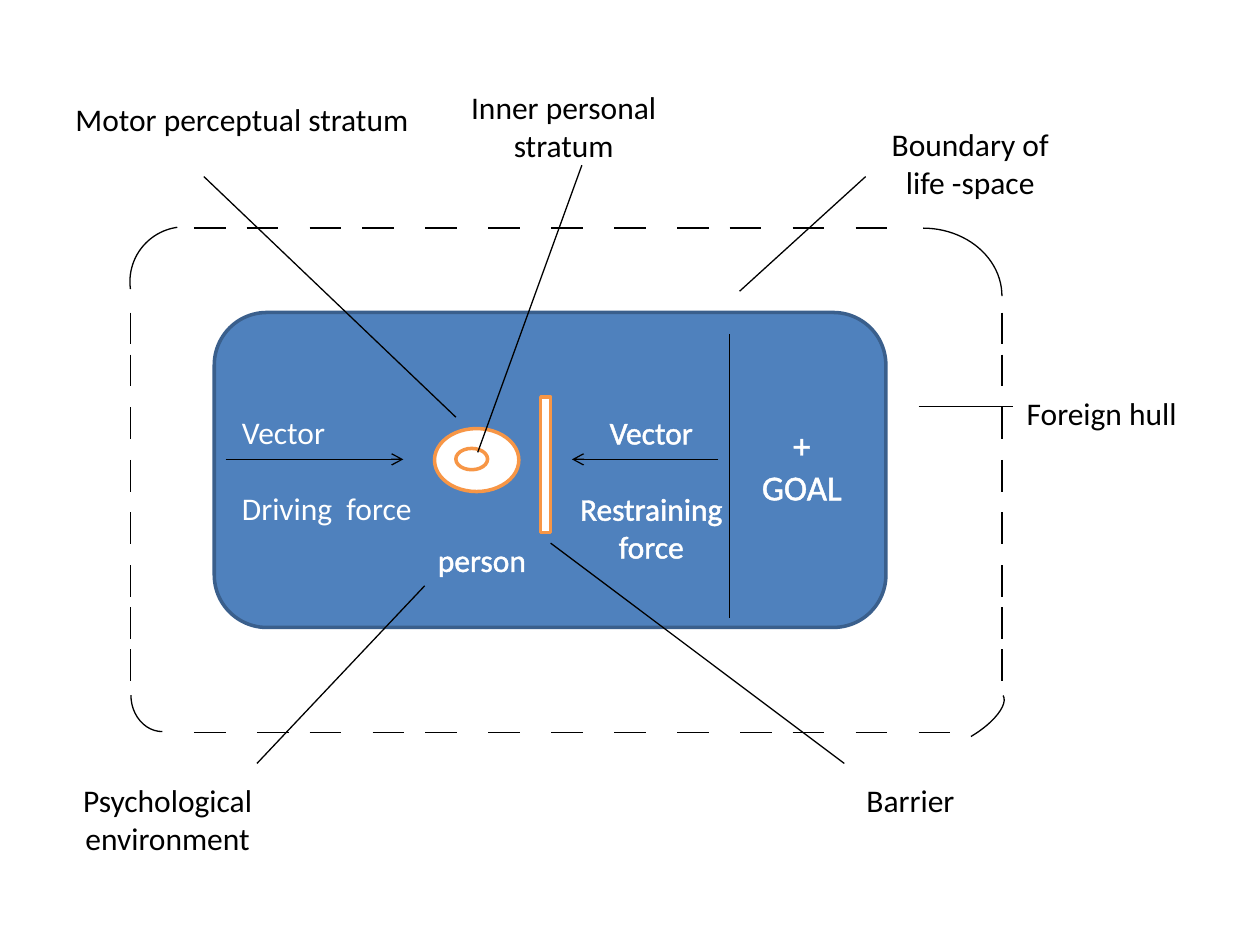
from itertools import accumulate
from lxml.etree import SubElement
from pptx import Presentation
from pptx.dml.color import RGBColor
from pptx.enum.shapes import MSO_CONNECTOR as Link, MSO_SHAPE as Kind
from pptx.enum.text import MSO_ANCHOR as Anchor, MSO_AUTO_SIZE as Fit, PP_ALIGN as Align
from pptx.oxml import parse_xml
from pptx.oxml.ns import qn
from pptx.util import Cm, Pt

BLACK, WHITE, BLUE, NAVY, ORANGE = "000000", "FFFFFF", "4F81BD", "3A5F8C", "F79646"
STEPS = {"T": 0.85, "S": 1.06, "L": 1.27}
DASH = 0.64
NS = "http://schemas.openxmlformats.org/drawingml/2006/main"


def tint(code):
    """Return the colour for a hex string."""
    return RGBColor.from_string(code)


def stroke(item, code, width):
    """Set the line colour and width of a shape or connector."""
    item.line.color.rgb = tint(code)
    item.line.width = Pt(width)


def write(frame, text, code, size=18, align=Align.CENTER):
    """Fill a text frame and format its runs."""
    frame.text = text
    for para in frame.paragraphs:
        para.alignment = align
        for run in para.runs:
            run.font.name = "Calibri"
            run.font.size = Pt(size)
            run.font.color.rgb = tint(code)


def outline(frame, code):
    """Draw a thin outline around the letters of a text frame."""
    for para in frame.paragraphs:
        for run in para.runs:
            edge = parse_xml(
                f'<a:ln xmlns:a="{NS}" w="{Pt(1.45)}"><a:solidFill>'
                f'<a:srgbClr val="{code}"/></a:solidFill></a:ln>')
            run.font._element.insert(0, edge)


def label(slide, box, text, code=BLACK, size=18, wrap=False):
    """Add a centred text box and return its frame."""
    frame = slide.shapes.add_textbox(*map(Cm, box)).text_frame
    frame.word_wrap = wrap
    frame.auto_size = Fit.SHAPE_TO_FIT_TEXT
    write(frame, text, code, size)
    return frame


def block(slide, kind, box, fill, edge):
    """Add a filled shape with a two-point edge."""
    shape = slide.shapes.add_shape(kind, *map(Cm, box))
    shape.shadow.inherit = False
    shape.fill.solid()
    shape.fill.fore_color.rgb = tint(fill)
    stroke(shape, edge, 2)
    return shape


def arc(slide, box, turn=0, flip=False):
    """Add one rounded corner of the hull."""
    shape = slide.shapes.add_shape(Kind.ARC, *map(Cm, box))
    shape.shadow.inherit = False
    shape.fill.background()
    stroke(shape, BLACK, 0.75)
    shape.rotation = turn
    if flip:
        frame = shape._element.spPr.find(qn("a:xfrm"))
        frame.set("flipH", "1")
        frame.set("flipV", "1")


def line(slide, ends, arrow=False):
    """Add a thin straight line, with an arrowhead at its end if asked."""
    link = slide.shapes.add_connector(Link.STRAIGHT, *map(Cm, ends))
    stroke(link, BLACK, 0.75)
    if arrow:
        SubElement(link.line._get_or_add_ln(), qn("a:tailEnd"), type="arrow")
    SubElement(link._element.spPr, qn("a:effectLst"))


def starts(first, steps):
    """Return the start of each dash along one side."""
    return accumulate((STEPS[step] for step in steps), initial=first)


def hull(slide):
    """Draw the dashed sides of the foreign hull."""
    for x in (20.2, 2.63):
        for y in starts(6.3, "TSSSSTT"):
            line(slide, (x, y, x, y + DASH))
    for y, steps in ((4.6, "SLSLLLLLSLL"), (14.76, "LSLSLLLLLSLL")):
        for x in starts(3.91, steps):
            line(slide, (x, y, x + DASH, y))


def space(slide):
    """Draw the life space with the person, barrier, forces and goal."""
    field = block(slide, Kind.ROUNDED_RECTANGLE, (4.32, 6.3, 13.54, 6.35), BLUE, NAVY)
    frame = field.text_frame
    frame.vertical_anchor = Anchor.MIDDLE
    write(frame, "Vector\nDriving  force", WHITE, align=Align.LEFT)
    frame.paragraphs[0].space_after = Pt(22)
    line(slide, (4.55, 9.26, 8.13, 9.26), arrow=True)
    outline(label(slide, (12.37, 8.41, 7.59, 1.96), "+\nGOAL", WHITE, 20, True), WHITE)
    line(slide, (14.7, 6.73, 14.7, 12.45))
    block(slide, Kind.RECTANGLE, (10.9, 8, 0.2, 2.74), WHITE, ORANGE)
    block(slide, Kind.OVAL, (8.76, 8.64, 1.7, 1.27), WHITE, ORANGE)
    force = label(slide, (11.35, 8.2, 3.56, 3.33), "Vector\nRestraining\nforce", WHITE)
    force.paragraphs[0].space_after = Pt(22)
    outline(force, WHITE)
    line(slide, (14.48, 9.26, 11.53, 9.26), arrow=True)
    outline(label(slide, (8.56, 10.77, 2.31, 1.02), "person", WHITE), WHITE)
    block(slide, Kind.OVAL, (9.19, 9.04, 0.64, 0.43), WHITE, ORANGE)


def main():
    """Build the slide and save it."""
    deck = Presentation()
    deck.slide_width, deck.slide_height = Cm(25.4), Cm(19.05)
    slide = deck.slides.add_slide(deck.slide_layouts[6])

    motor = slide.shapes.add_textbox(*map(Cm, (1.27, 1.9, 23.29, 15.67))).text_frame
    motor.word_wrap = True
    write(motor, "Motor perceptual stratum", BLACK, align=Align.LEFT)

    arc(slide, (17.02, 4.6, 3.18, 2.74))
    arc(slide, (2.64, 13.28, 1.27, 1.47), flip=True)
    arc(slide, (19, 13.54, 0.76, 1.96), 239.3, True)
    arc(slide, (2.62, 4.57, 2.21, 2.21), 262.2)
    space(slide)

    for box, text in (
        ((9.14, 1.65, 4.45, 1.8), "Inner personal\nstratum"),
        ((17.63, 2.39, 3.86, 1.8), "Boundary of\nlife -space"),
        ((20.42, 7.82, 3.58, 1.02), "Foreign hull"),
        ((17.2, 15.62, 2.31, 1.02), "Barrier"),
        ((1.4, 15.62, 3.96, 1.8), "Psychological\nenvironment"),
    ):
        label(slide, box, text)

    hull(slide)
    for ends in (
        (9.19, 8.41, 4.11, 3.56),
        (9.63, 9.12, 11.73, 3.33),
        (14.91, 5.87, 17.45, 3.56),
        (18.52, 8.2, 20.42, 8.2),
        (11.1, 10.95, 17.02, 15.39),
        (8.56, 11.81, 5.18, 15.39),
    ):
        line(slide, ends)
    deck.save("out.pptx")


if __name__ == "__main__":
    main()
